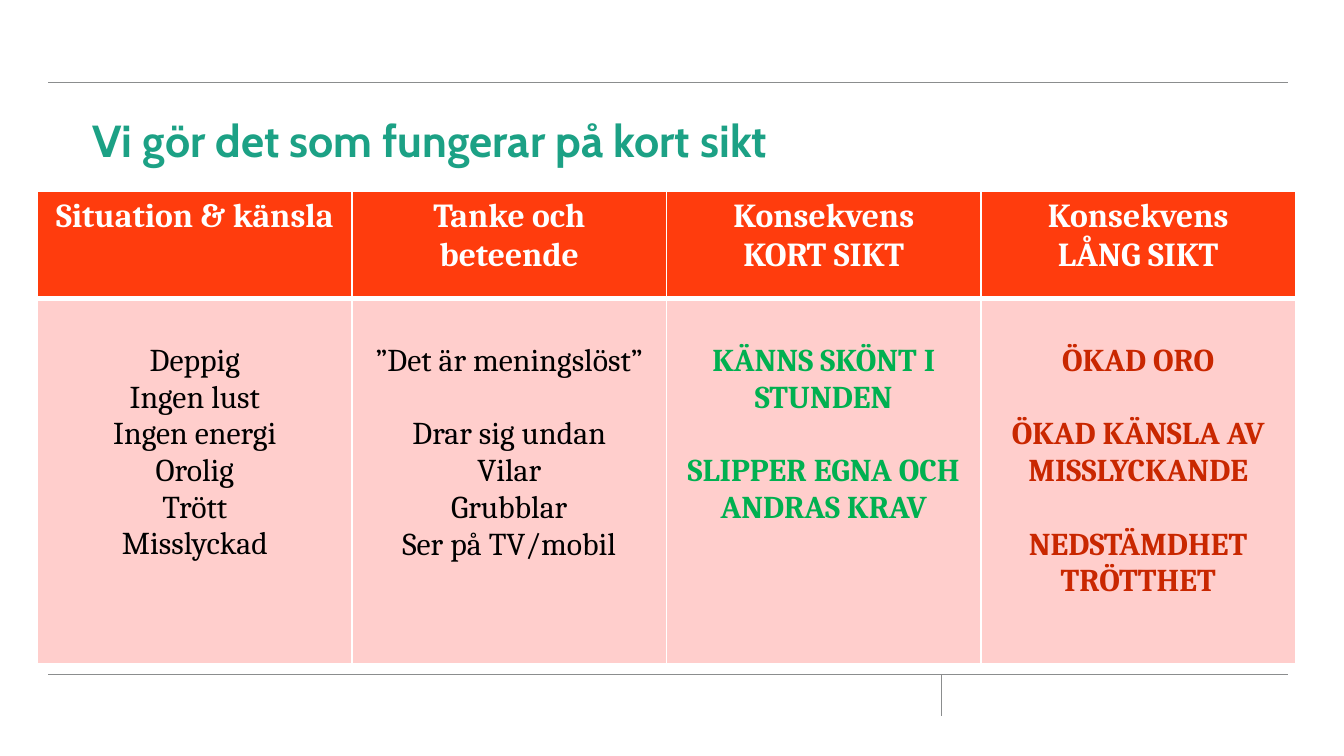
from lxml.etree import SubElement
from pptx import Presentation
from pptx.dml.color import RGBColor
from pptx.enum.shapes import MSO_CONNECTOR
from pptx.enum.text import MSO_ANCHOR, PP_ALIGN
from pptx.oxml import parse_xml
from pptx.oxml.ns import nsdecls, qn
from pptx.util import Inches, Pt

GREY = RGBColor(0x8B, 0x8D, 0x8E)
TEAL = RGBColor(0x1C, 0xA1, 0x85)
ORANGE = RGBColor(0xFF, 0x3C, 0x0D)
PINK = RGBColor(0xFF, 0xCE, 0xCC)
WHITE = RGBColor(0xFF, 0xFF, 0xFF)
BLACK = RGBColor(0, 0, 0)
GREEN = RGBColor(0x00, 0xB0, 0x50)
RED = RGBColor(0xC9, 0x27, 0x00)

# Each column: header lines, groups of body lines, body colour, body bold
COLUMNS = [
    (["Situation & känsla"],
     [["Deppig", "Ingen lust", "Ingen energi", "Orolig", "Trött", "Misslyckad"]],
     BLACK, False),
    (["Tanke och beteende"],
     [["”Det är meningslöst”"],
      ["Drar sig undan", "Vilar", "Grubblar", "Ser på TV/mobil"]],
     BLACK, False),
    (["Konsekvens", "KORT SIKT"],
     [["KÄNNS SKÖNT I STUNDEN"], ["SLIPPER EGNA OCH ANDRAS KRAV"]],
     GREEN, True),
    (["Konsekvens", "LÅNG SIKT"],
     [["ÖKAD ORO"], ["ÖKAD KÄNSLA AV MISSLYCKANDE"], ["NEDSTÄMDHET", "TRÖTTHET"]],
     RED, True),
]


def fill_cell(cell, groups, size, color, bold, gap=0):
    tf = cell.text_frame
    p = tf.paragraphs[0]
    for g, lines in enumerate(groups):
        for i, line in enumerate(lines):
            if g or i:
                p = tf.add_paragraph()
            p.text = line
            p.alignment = PP_ALIGN.CENTER
            if g and i == 0:
                p.space_before = Pt(gap)
            p.font.name = "Cambria"
            p.font.size = Pt(size)
            p.font.bold = bold
            p.font.color.rgb = color


def set_borders(cell, top, bottom):
    tcPr = cell._tc.get_or_add_tcPr()
    sides = [("lnL", 1), ("lnR", 1), ("lnT", top), ("lnB", bottom)]
    for i, (side, width) in enumerate(sides):
        tcPr.insert(i, parse_xml(
            f'<a:{side} {nsdecls("a")} w="{Pt(width)}"><a:solidFill>'
            f'<a:srgbClr val="{WHITE}"/></a:solidFill></a:{side}>'))


# Widescreen 16:9 slide
prs = Presentation()
prs.slide_width = Inches(10)
prs.slide_height = Inches(10 * 9 / 16)
s = prs.slides.add_slide(prs.slide_layouts[5])

# Frame lines
for x1, y1, x2, y2 in [(0.36, 0.61, 9.58, 0.61), (0.36, 5.02, 9.58, 5.02),
                       (7, 5.02, 7, 5.33)]:
    line = s.shapes.add_connector(MSO_CONNECTOR.STRAIGHT, Inches(x1), Inches(y1),
                                  Inches(x2), Inches(y2))
    line.line.color.rgb = GREY
    line.line.width = Pt(0.25)
    SubElement(line._element.spPr, qn("a:effectLst"))

# Title
title = s.shapes.title
title.left, title.top = Inches(0.59), Inches(0.53)
title.width, title.height = Inches(8.43), Inches(0.76)
tf = title.text_frame
tf.vertical_anchor = MSO_ANCHOR.BOTTOM
p = tf.paragraphs[0]
p.text = "Vi gör det som fungerar på kort sikt"
p.alignment = PP_ALIGN.LEFT
p.font.name = "Cabin"
p.font.size = Pt(24)
p.font.bold = True
p.font.color.rgb = TEAL

# Table
table = s.shapes.add_table(2, len(COLUMNS), Inches(0.28), Inches(1.42),
                           Inches(9.36), Inches(3.52)).table
table.rows[0].height, table.rows[1].height = Inches(0.8), Inches(2.72)
for c, (header, groups, color, bold) in enumerate(COLUMNS):
    table.columns[c].width = Inches(2.34)
    head, body = table.cell(0, c), table.cell(1, c)
    fill_cell(head, [header], 18, WHITE, True)
    fill_cell(body, groups, 17, color, bold, gap=19.7)
    body.margin_top = Inches(0.33)
    for cell, fill, top, bottom in [(head, ORANGE, 1, 3), (body, PINK, 3, 1)]:
        cell.fill.solid()
        cell.fill.fore_color.rgb = fill
        set_borders(cell, top, bottom)

prs.save("out.pptx")
